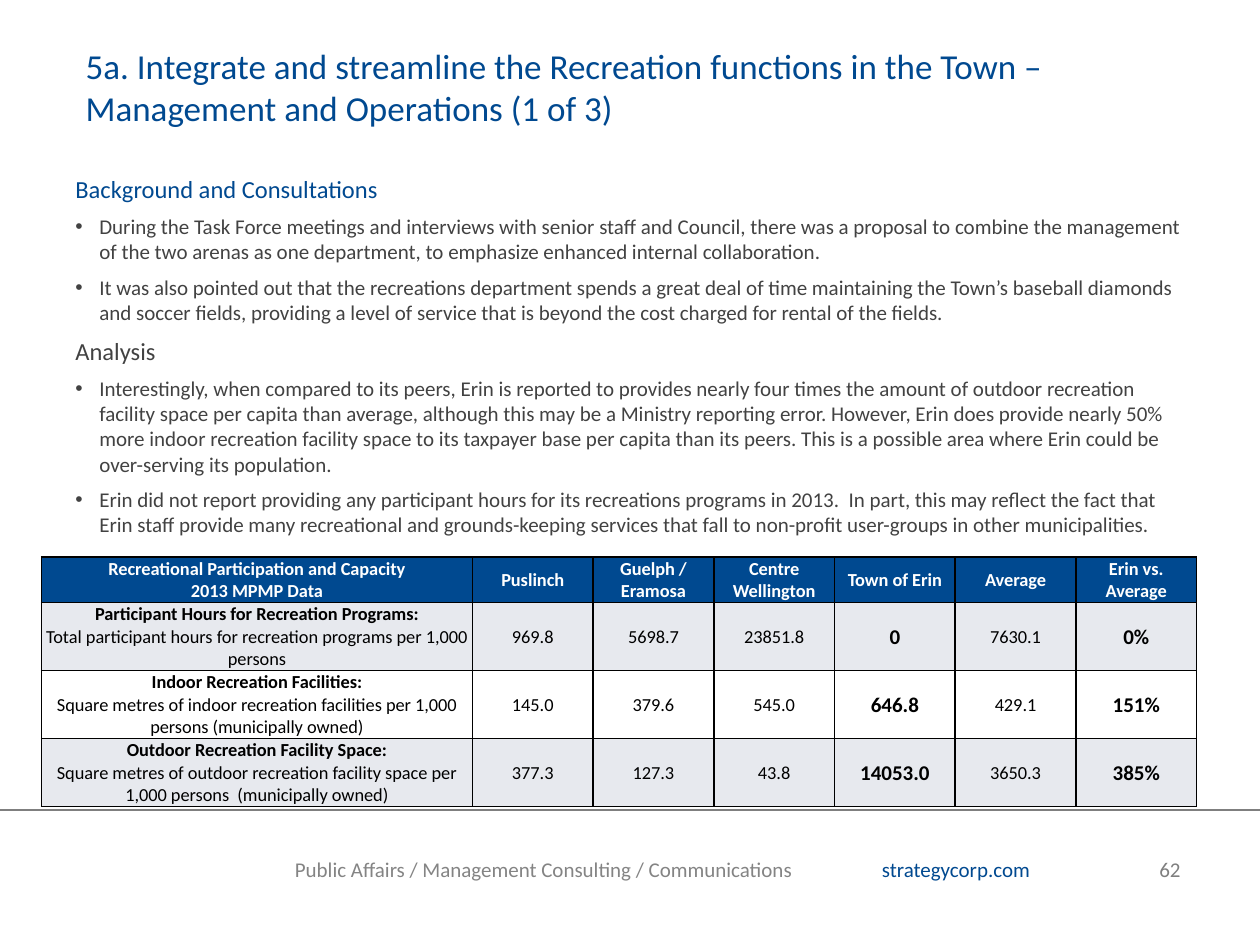
from lxml import etree
from pptx import Presentation, util as u
from pptx.dml import color as dml
from pptx.enum import shapes, text
from pptx.oxml import ns

COLORS = {
    "navy": "004990", "body": "424242", "gray": "7F7F7F", "footer": "848484",
    "band": "E7E9EE", "white": "FFFFFF", "black": "000000",
}
FONT = "Calibri"
COLUMNS, ROWS = 100, 75
HEADINGS = {"Background and Consultations": "navy", "Analysis": "body"}
BODY = [
    "Background and Consultations",
    "During the Task Force meetings and interviews with senior staff and Council, there was a proposal to combine the management of the two arenas as one department, to emphasize enhanced internal collaboration.",
    "It was also pointed out that the recreations department spends a great deal of time maintaining the Town’s baseball diamonds and soccer fields, providing a level of service that is beyond the cost charged for rental of the fields.",
    "Analysis",
    "Interestingly, when compared to its peers, Erin is reported to provides nearly four times the amount of outdoor recreation facility space per capita than average, although this may be a Ministry reporting error. However, Erin does provide nearly 50% more indoor recreation facility space to its taxpayer base per capita than its peers. This is a possible area where Erin could be over-serving its population.",
    "Erin did not report providing any participant hours for its recreations programs in 2013.  In part, this may reflect the fact that Erin staff provide many recreational and grounds-keeping services that fall to non-profit user-groups in other municipalities.",
]
TABLE = [
    ["Recreational Participation and Capacity\n2013 MPMP Data", "Puslinch", "Guelph / Eramosa",
     "Centre Wellington", "Town of Erin", "Average", "Erin vs. Average"],
    ["Participant Hours for Recreation Programs:\nTotal participant hours for recreation programs per 1,000 persons",
     "969.8", "5698.7", "23851.8", "0", "7630.1", "0%"],
    ["Indoor Recreation Facilities:\nSquare metres of indoor recreation facilities per 1,000 persons (municipally owned)",
     "145.0", "379.6", "545.0", "646.8", "429.1", "151%"],
    ["Outdoor Recreation Facility Space:\nSquare metres of outdoor recreation facility space per 1,000 persons  (municipally owned)",
     "377.3", "127.3", "43.8", "14053.0", "3650.3", "385%"],
]
EMPHASIZED = (4, 6)


def rgb(name):
    return dml.RGBColor.from_string(COLORS[name])


def add_element(parent, tag, **attributes):
    return etree.SubElement(parent, ns.qn(tag), attributes)


class SlideBuilder:
    def __init__(self, deck):
        self.page = deck.slides.add_slide(deck.slide_layouts[6])
        self.column = deck.slide_width / COLUMNS
        self.row = deck.slide_height / ROWS

    def place(self, left, top, width, height):
        return (round(left * self.column), round(top * self.row),
                round(width * self.column), round(height * self.row))

    def style(self, font, size, color, bold=False):
        font.name = FONT
        font.size = u.Pt(size)
        font.bold = bold
        font.color.rgb = rgb(color)

    def frame(self, area, margins=(0, 0)):
        frame = self.page.shapes.add_textbox(*self.place(*area)).text_frame
        frame.word_wrap = True
        frame.margin_left = frame.margin_right = u.Inches(margins[0])
        frame.margin_top = frame.margin_bottom = u.Inches(margins[1])
        return frame

    def label(self, area, words, size, color):
        para = self.frame(area).paragraphs[0]
        para.text = words
        self.style(para.font, size, color)

    def footer_contact(self, area, address, number, stop):
        para = self.frame(area).paragraphs[0]
        tabs = add_element(para._p.get_or_add_pPr(), "a:tabLst")
        add_element(tabs, "a:tab", pos=str(round(stop * self.column)), algn="r")
        for words, color in ((address + "\t", "navy"), (number, "gray")):
            span = para.add_run()
            span.text = words
            self.style(span.font, 12, color)

    def body(self, area, lines):
        frame = self.frame(area, (0.1, 0.05))
        for index, line in enumerate(lines):
            para = frame.paragraphs[0] if index == 0 else frame.add_paragraph()
            para.text = line
            if index:
                para.space_before = u.Pt(6)
            properties = para._p.get_or_add_pPr()
            indent = u.Inches(0.19)
            properties.set("marL", str(indent))
            properties.set("indent", str(-indent))
            if line in HEADINGS:
                self.style(para.font, 14, HEADINGS[line])
            else:
                add_element(properties, "a:buFont", typeface="Arial")
                add_element(properties, "a:buChar", char="•")
                self.style(para.font, 12, "body")

    def rule(self, top):
        left, y, width, _ = self.place(0, top, COLUMNS, 0)
        line = self.page.shapes.add_connector(shapes.MSO_CONNECTOR.STRAIGHT, left, y, left + width, y)
        line.line.color.rgb = rgb("gray")
        line.line.width = u.Pt(1)
        add_element(line._element.spPr, "a:effectLst")

    def border(self, cell):
        properties = cell._tc.get_or_add_tcPr()
        for side in ("L", "R", "T", "B"):
            line = add_element(properties, f"a:ln{side}", w=str(u.Pt(1)))
            add_element(add_element(line, "a:solidFill"), "a:srgbClr", val=COLORS["black"])

    def cell(self, cell, words, row, column):
        self.border(cell)
        cell.fill.solid()
        cell.fill.fore_color.rgb = rgb("navy" if row == 0 else "band" if row % 2 else "white")
        cell.vertical_anchor = text.MSO_ANCHOR.MIDDLE
        cell.margin_left = cell.margin_right = cell.margin_top = u.Inches(0.01)
        cell.margin_bottom = 0
        cell.text = words
        emphasized = row > 0 and column in EMPHASIZED
        for index, para in enumerate(cell.text_frame.paragraphs):
            para.alignment = text.PP_ALIGN.CENTER
            bold = row == 0 or emphasized or (column == 0 and index == 0)
            self.style(para.font, 12 if emphasized else 10.5, "white" if row == 0 else "black", bold)

    def table(self, left, top, widths, heights, data):
        area = self.place(left, top, sum(widths), sum(heights))
        table = self.page.shapes.add_table(len(heights), len(widths), *area).table
        table.first_row = table.horz_banding = False
        for column, width in zip(table.columns, widths):
            column.width = round(width * self.column)
        for row, height in zip(table.rows, heights):
            row.height = round(height * self.row)
        for row, values in enumerate(data):
            for column, words in enumerate(values):
                self.cell(table.cell(row, column), words, row, column)


def main():
    deck = Presentation()
    deck.slide_width, deck.slide_height = u.Inches(10), u.Inches(7.5)
    page = SlideBuilder(deck)
    page.footer_contact((70, 68, 25, 2), "strategycorp.com", "62", 23.7)
    page.label((23.4, 68, 44.2, 2), "Public Affairs / Management Consulting / Communications", 12, "footer")
    page.rule(64.3)
    page.label((6.8, 3.5, 89.3, 6.8),
               "5a. Integrate and streamline the Recreation functions in the Town – Management and Operations (1 of 3)",
               20, "navy")
    page.body((5, 13.3, 90, 49.2), BODY)
    page.table(3.3, 44.2, [34.2] + [9.58] * 6, [3.6] + [5.4] * 3, TABLE)
    deck.save("out.pptx")


if __name__ == "__main__":
    main()
